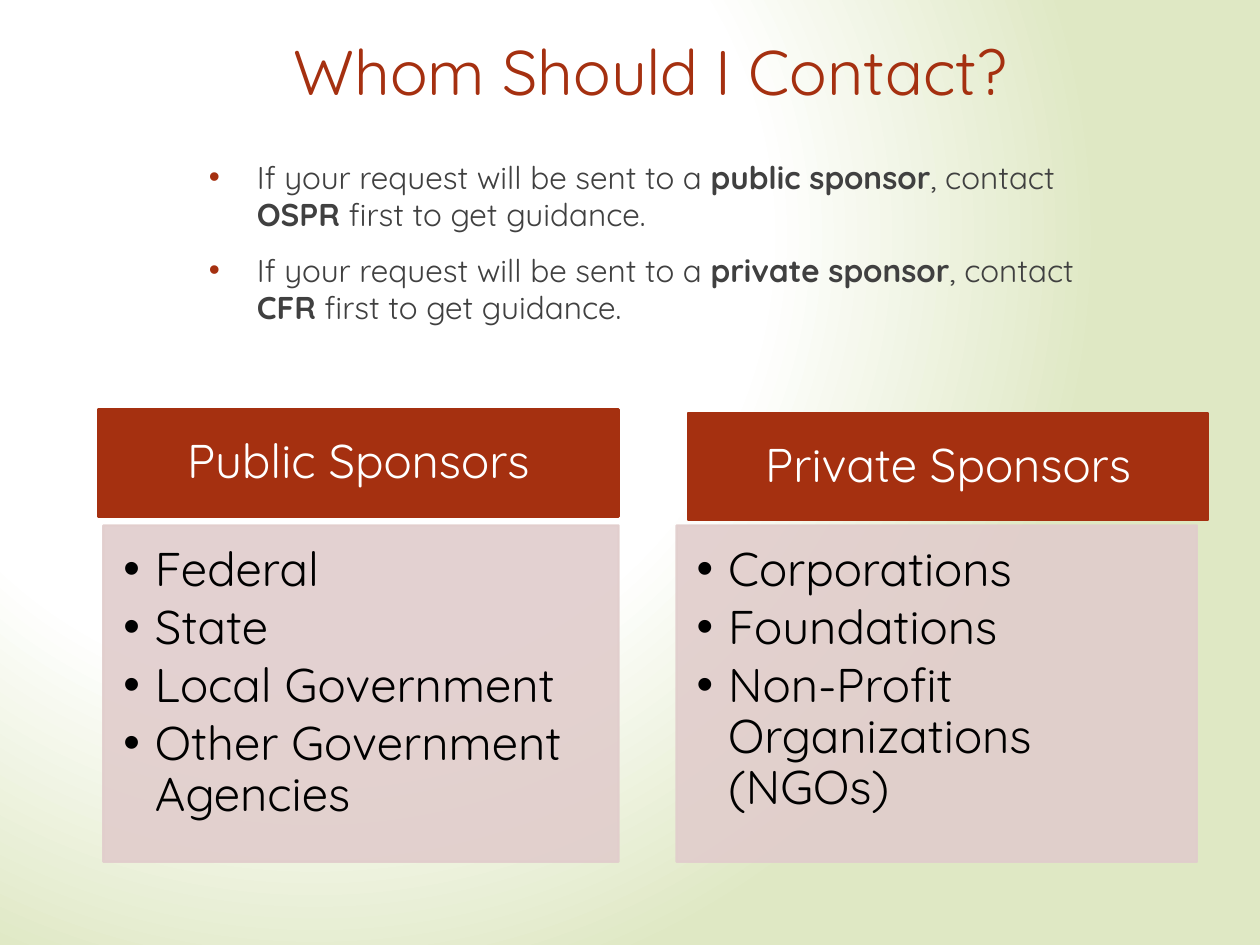
import pptx
import pptx.dml.color
import pptx.enum.shapes
import pptx.enum.text
import pptx.oxml
import pptx.oxml.ns
import pptx.util
from pptx.util import Inches

FONT = "Quicksand"
COLORS = {
    "rust": "A53010",
    "panel": "E1CDCC",
    "body": "404040",
    "white": "FFFFFF",
    "black": "000000",
    "green": "DFE8C4",
}
ALIGN = pptx.enum.text.PP_ALIGN
ANCHOR = pptx.enum.text.MSO_ANCHOR


def rgb(name):
    return pptx.dml.color.RGBColor.from_string(COLORS[name])


def add_child(parent, tag, **attributes):
    child = pptx.oxml.parse_xml(f"<a:{tag} {pptx.oxml.ns.nsdecls('a')}/>")
    for key, value in attributes.items():
        child.set(key, str(value))
    parent.append(child)
    return child


def paint_background(page):
    """Radial gradient from white, centred in the upper left, to green."""
    fill = page.background.fill
    fill.gradient()
    for stop, position, name in zip(fill.gradient_stops, (0.57, 1), ("white", "green")):
        stop.position = position
        stop.color.rgb = rgb(name)
    gradient = page.element.find(".//" + pptx.oxml.ns.qn("a:gradFill"))
    gradient.remove(gradient.find(pptx.oxml.ns.qn("a:lin")))
    circle = add_child(gradient, "path", path="circle")
    add_child(circle, "fillToRect", l=50000, t=50000, r=100000, b=100000)


def set_bullet(para, indent, color=None):
    properties = para._p.get_or_add_pPr()
    properties.set("marL", str(Inches(indent)))
    properties.set("indent", str(-Inches(indent)))
    if color:
        add_child(add_child(properties, "buClr"), "srgbClr", val=COLORS[color])
    add_child(properties, "buFont", typeface="Arial")
    add_child(properties, "buChar", char="•")


def write_text(box, paragraphs, size, color, align=ALIGN.LEFT, anchor=ANCHOR.TOP,
               insets=(0.1, 0.05, 0.1, 0.05), line=None, before=0, after=0,
               indent=None, bullet_color=None):
    """Each paragraph is a list of pieces; every second piece is bold."""
    frame = box.text_frame
    frame.word_wrap = True
    frame.vertical_anchor = anchor
    (frame.margin_left, frame.margin_top,
     frame.margin_right, frame.margin_bottom) = map(Inches, insets)
    for number, pieces in enumerate(paragraphs):
        para = frame.add_paragraph() if number else frame.paragraphs[0]
        para.alignment = align
        para.space_before = pptx.util.Pt(before)
        para.space_after = pptx.util.Pt(after)
        if line:
            para.line_spacing = line
        if indent:
            set_bullet(para, indent, bullet_color)
        for index, piece in enumerate(pieces):
            span = para.add_run()
            span.text = piece
            span.font.name = FONT
            span.font.size = pptx.util.Pt(size)
            span.font.bold = index % 2 == 1
            span.font.color.rgb = rgb(color)


def add_text(page, place, paragraphs, **style):
    box = page.shapes.add_textbox(*map(Inches, place))
    write_text(box, paragraphs, **style)


def add_panel(page, place, fill, paragraphs, opacity=None, **style):
    box = page.shapes.add_shape(pptx.enum.shapes.MSO_SHAPE.RECTANGLE, *map(Inches, place))
    box.shadow.inherit = False
    box.fill.solid()
    box.fill.fore_color.rgb = rgb(fill)
    box.line.color.rgb = rgb(fill)
    box.line.width = pptx.util.Pt(1.25)
    if opacity:
        for color in box._element.spPr.iter(pptx.oxml.ns.qn("a:srgbClr")):
            add_child(color, "alpha", val=opacity * 1000)
    write_text(box, paragraphs, **style)


def add_sponsors(page, heading, heading_place, names, list_place):
    add_panel(page, heading_place, "rust", [[heading]], size=27, color="white",
              align=ALIGN.CENTER, anchor=ANCHOR.MIDDLE, line=0.9,
              insets=(0.21, 0.12, 0.21, 0.12))
    add_panel(page, list_place, "panel", [[name] for name in names], opacity=90,
              size=27, color="black", line=0.9, after=4, indent=0.25,
              insets=(0.16, 0.16, 0.21, 0.24))


def main():
    deck = pptx.Presentation()
    deck.slide_width, deck.slide_height = Inches(10), Inches(7.5)
    page = deck.slides.add_slide(deck.slide_layouts[6])
    paint_background(page)

    # Title and guidance
    add_text(page, (0.83, 0.21, 8.67, 1.08), [["Whom Should I Contact?"]],
             size=36, color="rust", align=ALIGN.CENTER)
    guidance = [
        ["If your request will be sent to a ", f"{kind} sponsor", ", contact ",
         office, " first to get guidance."]
        for kind, office in (("public", "OSPR"), ("private", "CFR"))
    ]
    add_text(page, (1.56, 0.75, 7.21, 2.25), guidance, size=18, color="body",
             before=10, indent=0.38, bullet_color="rust", insets=(0.1, 0.5, 0.1, 0.05))

    # Sponsor columns
    add_sponsors(page, "Public Sponsors", (0.78, 3.25, 4.13, 0.85),
                 ["Federal", "State", "Local Government", "Other Government Agencies"],
                 (0.82, 4.17, 4.09, 2.67))
    add_sponsors(page, "Private Sponsors", (5.46, 3.28, 4.13, 0.85),
                 ["Corporations", "Foundations", "Non-Profit Organizations (NGOs)"],
                 (5.37, 4.17, 4.13, 2.67))

    deck.save("out.pptx")


if __name__ == "__main__":
    main()
